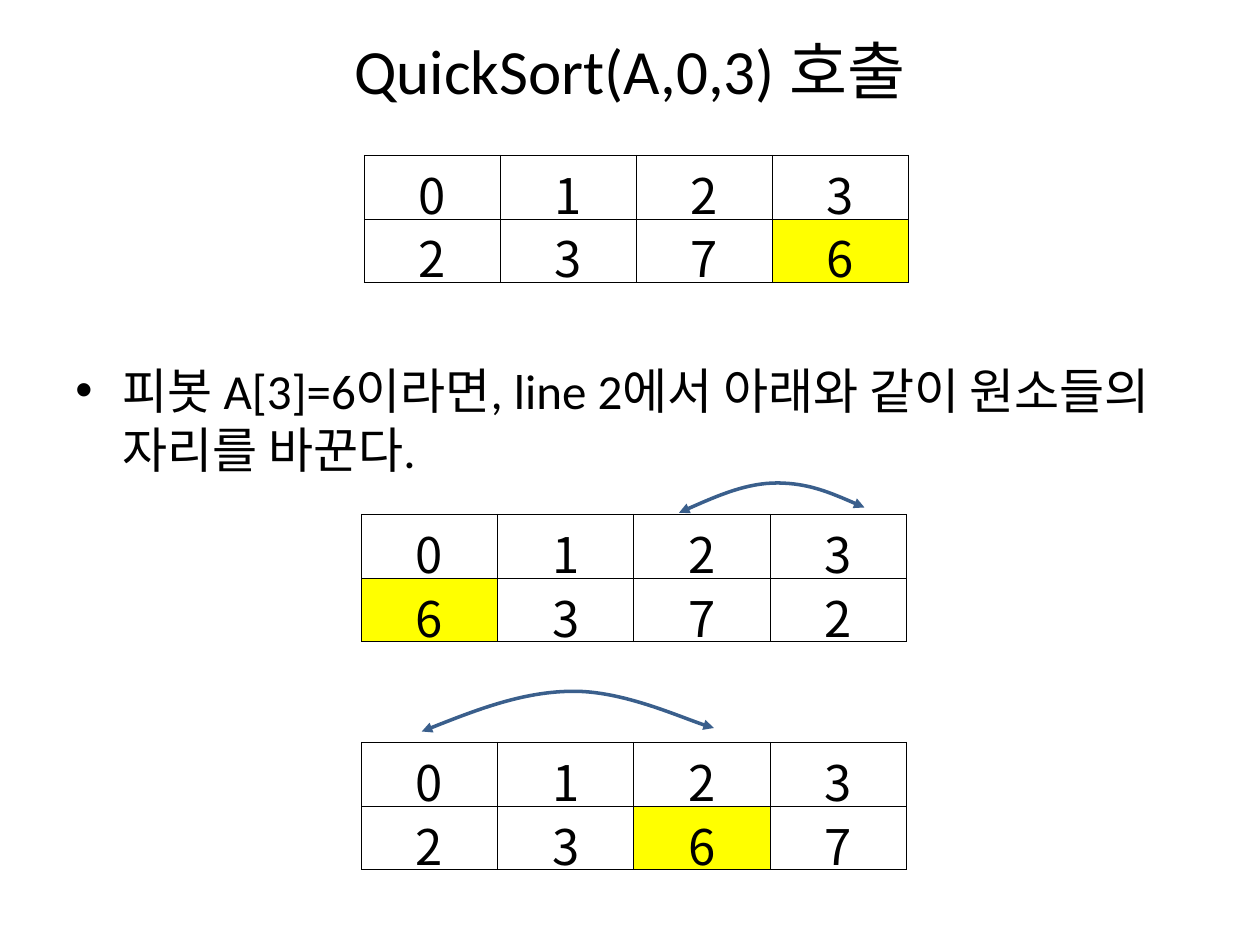
from dataclasses import dataclass

from lxml.etree import SubElement as Sub
from pptx import Presentation
from pptx.dml.color import RGBColor as RGB
from pptx.enum.text import MSO_ANCHOR as Anchor, PP_ALIGN as Align
from pptx.oxml.ns import qn
from pptx.util import Pt


@dataclass(frozen=True)
class Theme:
    ink: RGB = RGB(0, 0, 0)
    paper: RGB = RGB(255, 255, 255)
    pivot: RGB = RGB(255, 255, 0)
    arrow: RGB = RGB(0x3A, 0x5F, 0x8C)
    font: str = "Calibri"
    digit: str = "Noto Sans CJK KR"
    head: int = 36
    body: int = 28


THEME = Theme()
INDEX = "0123"
COL, ROW = 77.76, 34


def apply(obj, form):
    for name, value in form.items():
        setattr(obj, name, value)


def write(para, text, size, font):
    run = para.add_run()
    run.text = text
    apply(run.font, {"size": Pt(size), "name": font})
    run.font.color.rgb = THEME.ink
    Sub(run.font._element, qn("a:ea"), typeface=font)


def text_box(slide, box, text, size, anchor):
    frame = slide.shapes.add_textbox(*map(Pt, box)).text_frame
    apply(frame, {"word_wrap": True, "vertical_anchor": anchor})
    para = frame.paragraphs[0]
    write(para, text, size, THEME.font)
    return para


def title(slide, box, text):
    para = text_box(slide, box, text, THEME.head, Anchor.MIDDLE)
    para.alignment = Align.CENTER


def bullet(slide, box, text):
    para = text_box(slide, box, text, THEME.body, Anchor.TOP)
    props = para._p.get_or_add_pPr()
    props.set("marL", str(Pt(27)))
    props.set("indent", str(Pt(-27)))
    Sub(props, qn("a:buFont"), typeface="Arial")
    Sub(props, qn("a:buChar"), char="•")


def border(cell):
    """Rule all four sides; the lines must come before the fill."""
    props = cell._tc.get_or_add_tcPr()
    for spot, side in enumerate("LRTB"):
        line = Sub(props, qn(f"a:ln{side}"), w=str(Pt(0.28)))
        fill = Sub(line, qn("a:solidFill"))
        Sub(fill, qn("a:srgbClr"), val=str(THEME.ink))
        props.insert(spot, line)


def array(slide, left, top, values, pivot):
    """Show the indices above the values, with the pivot marked."""
    rows = (INDEX, values)
    wide = len(values)
    box = (left, top, COL * wide, ROW * len(rows))
    table = slide.shapes.add_table(len(rows), wide, *map(Pt, box)).table
    apply(table, {"first_row": False, "horz_banding": False})
    form = {
        "vertical_anchor": Anchor.MIDDLE,
        "margin_left": Pt(5), "margin_right": Pt(5),
        "margin_top": Pt(1.4), "margin_bottom": Pt(1.4),
    }
    for r, row in enumerate(rows):
        for c, digit in enumerate(row):
            cell = table.cell(r, c)
            apply(cell, form)
            cell.fill.solid()
            mark = r == 1 and c == pivot
            cell.fill.fore_color.rgb = THEME.pivot if mark else THEME.paper
            border(cell)
            para = cell.text_frame.paragraphs[0]
            para.alignment = Align.CENTER
            write(para, digit, THEME.body, THEME.digit)


def swap(slide, start, *points):
    """Draw a two-headed curve; each three points make one Bézier part."""
    build = slide.shapes.build_freeform(*start, scale=Pt(1))
    build.add_line_segments(points, close=False)
    curve = build.convert_to_shape()
    curve.shadow.inherit = False
    curve.fill.background()
    curve.line.color.rgb = THEME.arrow
    curve.line.width = Pt(2)
    trace = next(curve._element.iter(qn("a:path")))
    steps = trace.findall(qn("a:lnTo"))
    for i in range(0, len(steps), 3):
        bend = Sub(trace, qn("a:cubicBezTo"))
        for step in steps[i:i + 3]:
            bend.append(step[0])
            trace.remove(step)
    line = curve.line._get_or_add_ln()
    for end in ("headEnd", "tailEnd"):
        Sub(line, qn(f"a:{end}"), type="triangle")


def main():
    deck = Presentation()
    apply(deck, {"slide_width": Pt(720), "slide_height": Pt(540)})
    slide = deck.slides.add_slide(deck.slide_layouts[6])
    title(slide, (36, 9.4, 648, 61), "QuickSort(A,0,3) 호출")
    bullet(slide, (36, 202.3, 648, 85),
           "피봇 A[3]=6이라면, line 2에서 아래와 같이 원소들의 자리를 바꾼다.")
    array(slide, 208, 88.6, "2376", 3)
    swap(slide, (388, 293), (407.5, 284.4), (427, 276.5), (444.2, 275.8),
         (462, 275.8), (478, 283), (494, 290.2))
    swap(slide, (241.2, 417.6), (270.7, 406), (300.2, 395.3), (328.3, 394.6),
         (355.7, 394.6), (396, 413.3), (407.5, 416.2))
    array(slide, 206.6, 293.8, "6372", 0)
    array(slide, 206.6, 424.1, "2367", 2)
    deck.save("out.pptx")


if __name__ == "__main__":
    main()
